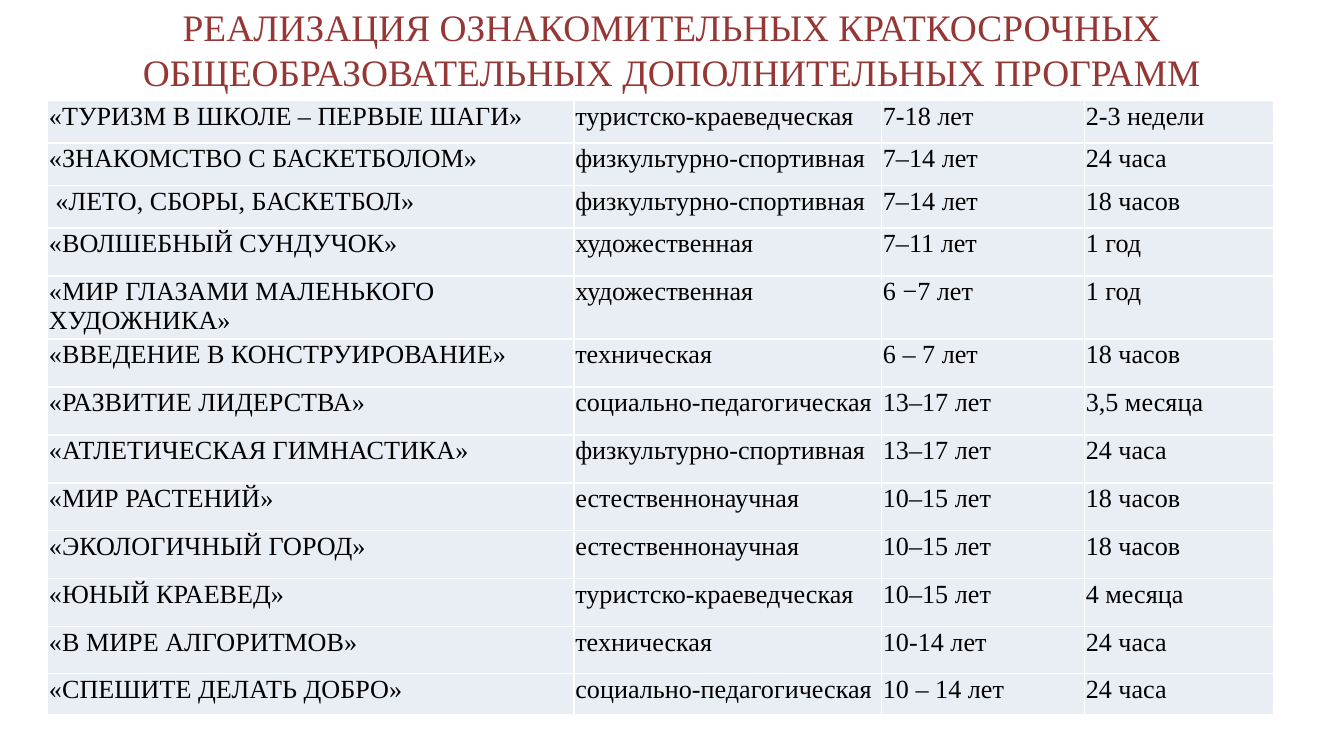
import pptx
import pptx.dml.color
import pptx.enum.text
import pptx.util

Pt = pptx.util.Pt
FONT = "Times New Roman"
TITLE_RED = pptx.dml.color.RGBColor(0x95, 0x37, 0x35)
BLACK = pptx.dml.color.RGBColor(0, 0, 0)
CELL_FILL = pptx.dml.color.RGBColor(0xE9, 0xED, 0xF4)

TITLE = "РЕАЛИЗАЦИЯ ОЗНАКОМИТЕЛЬНЫХ КРАТКОСРОЧНЫХ ОБЩЕОБРАЗОВАТЕЛЬНЫХ ДОПОЛНИТЕЛЬНЫХ ПРОГРАММ"
COLUMN_WIDTHS = [282, 164.8, 108.7, 101.2]
ROW_HEIGHTS = [22.8] * 3 + [25.7, 33.7] + [25.7] * 6 + [25.2, 22.3]
PROGRAMS = [
    ("«ТУРИЗМ В ШКОЛЕ – ПЕРВЫЕ ШАГИ»", "туристско-краеведческая", "7-18 лет", "2-3 недели"),
    ("«ЗНАКОМСТВО С БАСКЕТБОЛОМ»", "физкультурно-спортивная", "7–14 лет", "24 часа"),
    (" «ЛЕТО, СБОРЫ, БАСКЕТБОЛ»", "физкультурно-спортивная", "7–14 лет", "18 часов"),
    ("«ВОЛШЕБНЫЙ СУНДУЧОК»", "художественная", "7–11 лет", "1 год"),
    ("«МИР ГЛАЗАМИ МАЛЕНЬКОГО ХУДОЖНИКА»", "художественная", "6 −7 лет", "1 год"),
    ("«ВВЕДЕНИЕ В КОНСТРУИРОВАНИЕ»", "техническая", "6 – 7 лет", "18 часов"),
    ("«РАЗВИТИЕ ЛИДЕРСТВА»", "социально-педагогическая", "13–17 лет", "3,5 месяца"),
    ("«АТЛЕТИЧЕСКАЯ ГИМНАСТИКА»", "физкультурно-спортивная", "13–17 лет", "24 часа"),
    ("«МИР РАСТЕНИЙ»", "естественнонаучная", "10–15 лет", "18 часов"),
    ("«ЭКОЛОГИЧНЫЙ ГОРОД»", "естественнонаучная", "10–15 лет", "18 часов"),
    ("«ЮНЫЙ КРАЕВЕД»", "туристско-краеведческая", "10–15 лет", "4 месяца"),
    ("«В МИРЕ АЛГОРИТМОВ»", "техническая", "10-14 лет", "24 часа"),
    ("«СПЕШИТЕ ДЕЛАТЬ ДОБРО»", "социально-педагогическая", "10 – 14 лет", "24 часа"),
]


def set_font(para, size, color):
    """Give a paragraph the slide's typeface in a size and colour."""
    para.font.name = FONT
    para.font.size = Pt(size)
    para.font.color.rgb = color


def place_title(page, left, top, width, height):
    """Move and format the title placeholder."""
    title = page.shapes.title
    title.left, title.top = Pt(left), Pt(top)
    title.width, title.height = Pt(width), Pt(height)
    frame = title.text_frame
    frame.text = TITLE
    frame.word_wrap = True
    frame.auto_size = pptx.enum.text.MSO_AUTO_SIZE.NONE
    frame.vertical_anchor = pptx.enum.text.MSO_ANCHOR.MIDDLE
    para = frame.paragraphs[0]
    para.alignment = pptx.enum.text.PP_ALIGN.CENTER
    set_font(para, 20, TITLE_RED)


def fill_cell(cell, text):
    """Write one table cell with narrow margins."""
    cell.text = text
    cell.margin_left = cell.margin_right = cell.margin_top = Pt(0.72)
    cell.margin_bottom = Pt(0)
    cell.fill.solid()
    cell.fill.fore_color.rgb = CELL_FILL
    set_font(cell.text_frame.paragraphs[0], 14, BLACK)


def place_programs(page, left, top, width, height):
    """Add the table of programs, scaled to its box."""
    table = page.shapes.add_table(
        len(PROGRAMS), len(COLUMN_WIDTHS), Pt(left), Pt(top), Pt(width), Pt(height)
    ).table
    table.first_row = False
    table.horz_banding = False
    for column, share in zip(table.columns, COLUMN_WIDTHS):
        column.width = Pt(width * share / sum(COLUMN_WIDTHS))
    for row, share, program in zip(table.rows, ROW_HEIGHTS, PROGRAMS):
        row.height = Pt(height * share / sum(ROW_HEIGHTS))
        for cell, text in zip(row.cells, program):
            fill_cell(cell, text)


def main():
    """Build the slide and save the deck."""
    deck = pptx.Presentation()
    deck.slide_width, deck.slide_height = Pt(720), Pt(405)
    page = deck.slides.add_slide(deck.slide_layouts[5])
    place_title(page, 0, -1.4, 720, 55.4)
    place_programs(page, 25.5, 53.8, 656.7, 329.6)
    deck.save("out.pptx")


if __name__ == "__main__":
    main()
